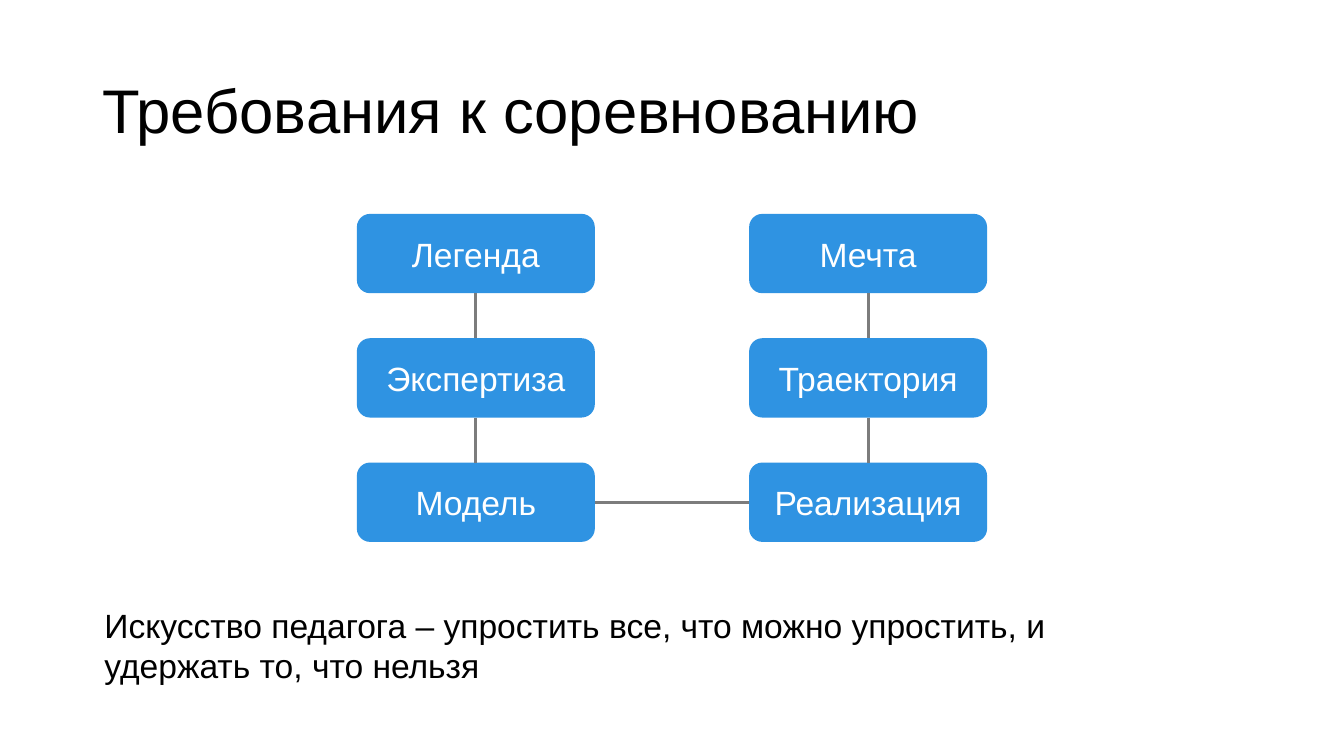
from lxml import etree
from pptx import Presentation
from pptx.dml.color import RGBColor
from pptx.enum import shapes, text
from pptx.oxml import ns
from pptx.util import Pt

BLACK = RGBColor(0x00, 0x00, 0x00)
WHITE = RGBColor(0xFF, 0xFF, 0xFF)
BLUE = RGBColor(0x2F, 0x93, 0xE2)
GRAY = RGBColor(0x7C, 0x7C, 0x7C)

# Connection sites of a rounded box
TOP, LEFT, BOTTOM, RIGHT = range(4)


class Deck:
    font = "Arial"
    size = 24

    def __init__(self, wide, high):
        self.prs = Presentation()
        self.prs.slide_width, self.prs.slide_height = Pt(wide), Pt(high)
        self.slide = self.prs.slides.add_slide(self.prs.slide_layouts[5])

    def label(self, shape, words, color=BLACK, size=size, align="LEFT",
              anchor="MIDDLE", fit="NONE", space=1.0):
        frame = shape.text_frame
        frame.text = words
        par = frame.paragraphs[0]
        forms = (
            (frame, {"word_wrap": True,
                     "auto_size": getattr(text.MSO_AUTO_SIZE, fit),
                     "vertical_anchor": getattr(text.MSO_ANCHOR, anchor)}),
            (par, {"alignment": getattr(text.PP_ALIGN, align),
                   "line_spacing": space}),
            (par.runs[0].font, {"name": self.font, "size": Pt(size)}),
        )
        for item, form in forms:
            for key, value in form.items():
                setattr(item, key, value)
        par.runs[0].font.color.rgb = color

    def title(self, words, **place):
        shape = self.slide.shapes.title
        for key, value in place.items():
            setattr(shape, key, Pt(value))
        self.label(shape, words, size=44, space=0.9)

    def note(self, words, *place):
        shape = self.slide.shapes.add_textbox(*map(Pt, place))
        self.label(shape, words, anchor="TOP", fit="SHAPE_TO_FIT_TEXT")

    def box(self, words, *place):
        kind = shapes.MSO_SHAPE.ROUNDED_RECTANGLE
        shape = self.slide.shapes.add_shape(kind, *map(Pt, place))
        shape.shadow.inherit = False
        shape.fill.solid()
        shape.fill.fore_color.rgb = BLUE
        shape.line.fill.background()
        self.label(shape, words, WHITE, align="CENTER")
        return shape

    def link(self, start, out, end, into):
        kind = shapes.MSO_CONNECTOR.STRAIGHT
        line = self.slide.shapes.add_connector(kind, 0, 0, 0, 0)
        line.begin_connect(start, out)
        line.end_connect(end, into)
        line.line.color.rgb = GRAY
        line.line.width = Pt(2)
        etree.SubElement(line._element.spPr, ns.qn("a:effectLst"))


def main():
    deck = Deck(960, 540)

    # Title and closing note
    deck.title("Требования к соревнованию",
               left=66, top=28.75, width=828, height=104.4)
    deck.note("Искусство педагога – упростить все, что можно упростить, "
              "и удержать то, что нельзя", 67.5, 428.5, 687.5, 65.4)

    # Two columns of boxes
    names = (("Легенда", "Экспертиза", "Модель"),
             ("Мечта", "Траектория", "Реализация"))
    cols = [[deck.box(name, 254.9 + 280.2 * col, 152.8 + 88.8 * row, 170, 56.7)
             for row, name in enumerate(column)]
            for col, column in enumerate(names)]

    # Links down each column and across the last row
    for col in cols:
        for upper, lower in zip(col, col[1:]):
            deck.link(upper, BOTTOM, lower, TOP)
    deck.link(cols[1][-1], LEFT, cols[0][-1], RIGHT)

    deck.prs.save("out.pptx")


if __name__ == "__main__":
    main()
